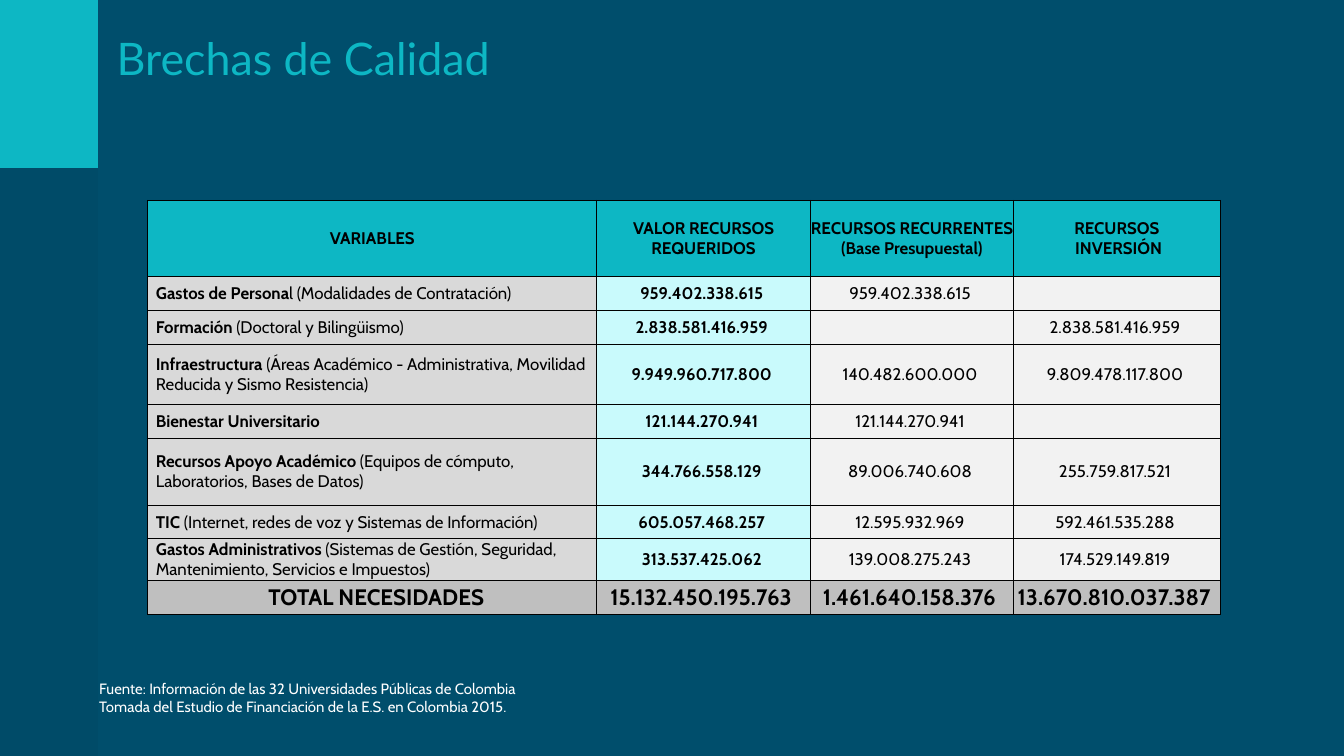
import pptx
import pptx.util
import pptx.dml.color
import pptx.enum.shapes
import pptx.enum.text
import pptx.oxml.ns
import lxml.etree

Inches = pptx.util.Inches
Pt = pptx.util.Pt
qn = pptx.oxml.ns.qn
ALIGN = pptx.enum.text.PP_ALIGN

WIDE = 10
HIGH = WIDE * 9 / 16

THEME = {
    "back": "004E6C", "teal": "0DB7C4", "black": "000000", "white": "FFFFFF",
    "label": "D9D9D9", "need": "C9FAFC", "plain": "F2F2F2", "total": "BFBFBF",
    "head": "Lato", "body": "Cabin",
    "title": 24, "cell": 9, "sum": 12, "note": 8, "rule": 0.5,
}

TITLE = ["Brechas de Calidad"]
SOURCE = [
    "Fuente: Información de las 32 Universidades Públicas de Colombia",
    "Tomada del Estudio de Financiación de la E.S. en Colombia 2015.",
]
BREAK = (None, None)
HEADS = [
    [[("VARIABLES", True)]],
    [[("VALOR RECURSOS REQUERIDOS", True)]],
    [[("RECURSOS RECURRENTES", True), BREAK, ("(Base Presupuestal)", True)]],
    [[("RECURSOS", True)], [(" INVERSIÓN", True)]],
]
ROWS = [
    ("Gastos de Persona", "l (Modalidades de Contratación)",
     "959.402.338.615 ", "959.402.338.615 ", ""),
    ("Formación", " (Doctoral y Bilingüismo)",
     "2.838.581.416.959 ", "", "2.838.581.416.959 "),
    ("Infraestructura ",
     "(Áreas Académico - Administrativa, Movilidad Reducida y Sismo Resistencia)",
     "9.949.960.717.800 ", "140.482.600.000 ", "9.809.478.117.800 "),
    ("Bienestar Universitario", "",
     "121.144.270.941 ", "121.144.270.941 ", ""),
    ("Recursos Apoyo Académico",
     " (Equipos de cómputo, Laboratorios, Bases de Datos)",
     "344.766.558.129 ", "89.006.740.608 ", "255.759.817.521 "),
    ("TIC", " (Internet, redes de voz y Sistemas de Información)",
     "605.057.468.257 ", "12.595.932.969 ", "592.461.535.288 "),
    ("Gastos Administrativos",
     " (Sistemas de Gestión, Seguridad, Mantenimiento, Servicios e Impuestos)",
     "313.537.425.062 ", "139.008.275.243 ", "174.529.149.819 "),
]
TOTALS = ["TOTAL NECESIDADES", "15.132.450.195.763 ",
          "1.461.640.158.376 ", "13.670.810.037.387 "]
WIDTHS = [3.34, 1.59, 1.51, 1.54]
HEIGHTS = [0.57, 0.25, 0.25, 0.45, 0.25, 0.5, 0.25, 0.31, 0.25]


def paint(fill, name):
    fill.solid()
    fill.fore_color.rgb = pptx.dml.color.RGBColor.from_string(THEME[name])


def write(frame, lines, size, color, face="body", align=ALIGN.LEFT):
    for i, line in enumerate(lines):
        para = frame.paragraphs[0] if i == 0 else frame.add_paragraph()
        para.alignment = align
        for text, bold in line:
            if text is None:
                para.add_line_break()
                continue
            run = para.add_run()
            run.text = text
            run.font.name = THEME[face]
            run.font.size = Pt(THEME[size])
            run.font.bold = bold
            paint(run.font.fill, color)
        if not line:
            end = lxml.etree.SubElement(para._p, qn("a:endParaRPr"))
            end.set("sz", str(THEME[size] * 100))


def band(slide, height, color):
    box = slide.shapes.add_shape(
        pptx.enum.shapes.MSO_SHAPE.RECTANGLE, 0, 0, Inches(0.73), Inches(height))
    box.shadow.inherit = False
    box.line.fill.background()
    paint(box.fill, color)
    return box


def label(slide, place, lines, size, color, face):
    frame = slide.shapes.add_textbox(*map(Inches, place)).text_frame
    frame.word_wrap = True
    write(frame, [[(line, False)] for line in lines], size, color, face)


def border(cell):
    props = cell._tc.get_or_add_tcPr()
    for side in ("a:lnL", "a:lnR", "a:lnT", "a:lnB"):
        line = lxml.etree.SubElement(props, qn(side), w=str(Pt(THEME["rule"])))
        fill = lxml.etree.SubElement(line, qn("a:solidFill"))
        lxml.etree.SubElement(fill, qn("a:srgbClr"), val=THEME["black"])


def fill_cell(cell, lines, color, size="cell", align=ALIGN.CENTER, left=0):
    cell.margin_left = Inches(left)
    cell.margin_right = cell.margin_top = cell.margin_bottom = 0
    cell.vertical_anchor = pptx.enum.text.MSO_ANCHOR.MIDDLE
    border(cell)
    paint(cell.fill, color)
    write(cell.text_frame, lines, size, "black", align=align)


def grid(slide):
    frame = slide.shapes.add_table(
        len(HEIGHTS), len(WIDTHS), Inches(1.1), Inches(1.49),
        Inches(sum(WIDTHS)), Inches(sum(HEIGHTS)))
    table = frame.table
    table.first_row = table.horz_banding = False
    for col, width in zip(table.columns, WIDTHS):
        col.width = Inches(width)
    for row, height in zip(table.rows, HEIGHTS):
        row.height = Inches(height)
    for c, lines in enumerate(HEADS):
        fill_cell(table.cell(0, c), lines, "teal")
    for r, (name, detail, *values) in enumerate(ROWS, 1):
        parts = [(name, True)] + ([(detail, False)] if detail else [])
        fill_cell(table.cell(r, 0), [parts], "label", align=ALIGN.LEFT, left=0.06)
        for c, value in enumerate(values, 1):
            parts = [(value, c == 1)] if value else []
            fill_cell(table.cell(r, c), [parts], "need" if c == 1 else "plain")
    for c, text in enumerate(TOTALS):
        fill_cell(table.cell(len(ROWS) + 1, c), [[(text, True)]], "total", "sum",
                  left=0 if c else 0.06)


def main():
    deck = pptx.Presentation()
    deck.slide_width, deck.slide_height = Inches(WIDE), Inches(HIGH)
    slide = deck.slides.add_slide(deck.slide_layouts[6])
    paint(slide.background.fill, "back")
    shade = band(slide, HIGH, "black")
    tone = shade._element.spPr.find(".//" + qn("a:srgbClr"))
    lxml.etree.SubElement(tone, qn("a:alpha"), val="3000")
    band(slide, 1.25, "teal")
    grid(slide)
    label(slide, (0.64, 5.01, 3.84, 0.37), SOURCE, "note", "white", "body")
    label(slide, (0.77, 0.18, 6.97, 0.86), TITLE, "title", "teal", "head")
    deck.save("out.pptx")


if __name__ == "__main__":
    main()
